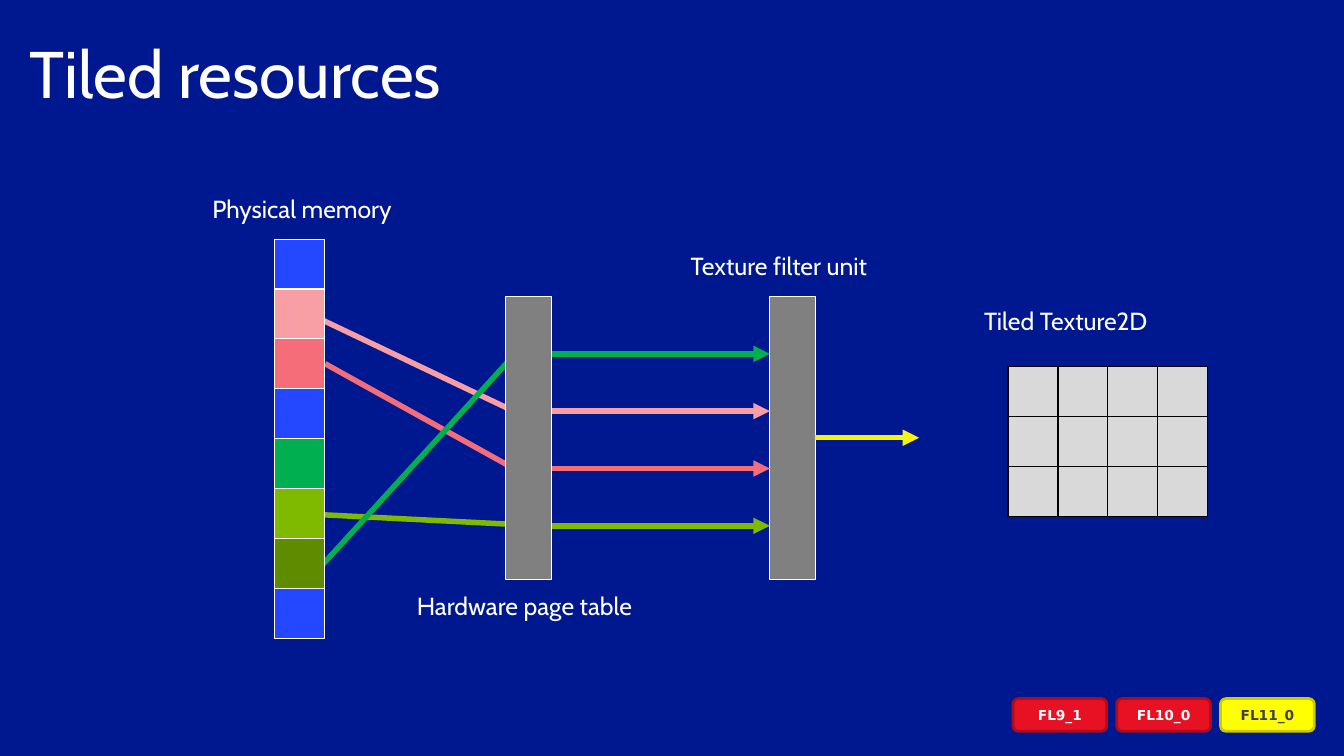
from dataclasses import dataclass

from lxml.etree import SubElement
from pptx import Presentation
from pptx.dml.color import RGBColor
from pptx.enum.shapes import MSO_CONNECTOR as CONN, MSO_SHAPE as SHAPE
from pptx.enum.text import MSO_ANCHOR as ANCHOR, PP_ALIGN as ALIGN
from pptx.oxml.ns import qn
from pptx.util import Pt

COLORS = {
    "navy": "00188F", "white": "FFFFFF", "black": "000000",
    "gray": "808080", "light": "D9D9D9", "dark": "404040",
    "blue": "2348FF", "pink": "F89EA5", "coral": "F46D78",
    "green": "00B050", "lime": "7FBA00", "olive": "5F8B00",
    "arrow": "F8F30D", "red": "E81123", "red_edge": "AC0D1A",
    "yellow": "FFFF00", "yellow_edge": "CDC800",
}
CELL = 36.36
UNIT_TOP, UNIT_W, UNIT_H = 216, 33.1, 205.9
TABLE_X, FILTER_X = 368.6, 560.9


@dataclass
class Label:
    text: str
    x: float
    y: float
    w: float


@dataclass
class Link:
    color: str
    x1: float
    y1: float
    x2: float
    y2: float


@dataclass
class Badge:
    text: str
    fill: str
    edge: str
    ink: str


LABELS = [
    Label("Physical memory", 147.6, 137.5, 150.5),
    Label("Hardware page table", 296.6, 427, 180.7),
    Label("Texture filter unit", 496.1, 179.3, 149),
    Label("Tiled Texture2D", 709.9, 219.6, 192.2),
]
LINKS = [
    Link("coral", 236.9, 265, 392.4, 351.4),
    Link("pink", 226.1, 229, 392.4, 308.2),
    Link("lime", 222.5, 374.4, 392.4, 383),
    Link("green", 218.9, 429.1, 385.2, 247),
]
MEMORY = ["blue", "pink", "coral", "blue", "green", "lime", "olive", "blue"]
LOOKUPS = ["green", "pink", "coral", "lime"]
BADGES = [
    Badge("FL9_1", "red", "red_edge", "white"),
    Badge("FL10_0", "red", "red_edge", "white"),
    Badge("FL11_0", "yellow", "yellow_edge", "dark"),
]


def rgb(name: str) -> RGBColor:
    return RGBColor.from_string(COLORS[name])


def write(s, text: str, *, size: float, color: str = "white", font: str = "Cabin",
          bold: bool = False, align=ALIGN.LEFT, anchor=ANCHOR.TOP,
          insets: tuple[float, float] = (7.2, 3.6)) -> None:
    tf = s.text_frame
    tf.word_wrap = True
    tf.vertical_anchor = anchor
    tf.margin_left = tf.margin_right = Pt(insets[0])
    tf.margin_top = tf.margin_bottom = Pt(insets[1])
    p = tf.paragraphs[0]
    p.alignment = align
    r = p.add_run()
    r.text = text
    r.font.name, r.font.size, r.font.bold = font, Pt(size), bold
    r.font.color.rgb = rgb(color)


def add_box(sp, x: float, y: float, w: float, h: float, fill: str,
            edge: str = "white", weight: float = 0.75, kind=SHAPE.RECTANGLE):
    s = sp.add_shape(kind, Pt(x), Pt(y), Pt(w), Pt(h))
    s.shadow.inherit = False
    s.fill.solid()
    s.fill.fore_color.rgb = rgb(fill)
    s.line.color.rgb = rgb(edge)
    s.line.width = Pt(weight)
    return s


def add_link(sp, link: Link, arrow: bool = False):
    c = sp.add_connector(CONN.STRAIGHT, Pt(link.x1), Pt(link.y1), Pt(link.x2), Pt(link.y2))
    c.line.color.rgb = rgb(link.color)
    c.line.width = Pt(4)
    if arrow:
        SubElement(c.line._get_or_add_ln(), qn("a:tailEnd"), type="triangle")
    SubElement(c._element.spPr, qn("a:effectLst"))
    return c


def main() -> None:
    prs = Presentation()
    prs.slide_width, prs.slide_height = Pt(979.2), Pt(550.8)
    slide = prs.slides.add_slide(prs.slide_layouts[6])
    slide.background.fill.solid()
    slide.background.fill.fore_color.rgb = rgb("navy")
    sp = slide.shapes

    # Title and labels
    title = sp.add_textbox(Pt(21.6), Pt(23.8), Pt(936), Pt(72))
    write(title, "Tiled resources", size=48, insets=(0, 0))
    for label in LABELS:
        s = sp.add_textbox(Pt(label.x), Pt(label.y), Pt(label.w), Pt(28.8))
        write(s, label.text, size=18)

    # Texture filter unit and its output
    filter_unit = add_box(sp, FILTER_X, UNIT_TOP, UNIT_W, UNIT_H, "gray")
    mid = UNIT_TOP + UNIT_H / 2
    output = add_link(sp, Link("arrow", FILTER_X + UNIT_W, mid, 669.6, mid), arrow=True)
    output.begin_connect(filter_unit, 3)

    # Page table lookups
    for i, color in enumerate(LOOKUPS):
        y = 257.8 + i * 41.76
        add_link(sp, Link(color, TABLE_X + UNIT_W, y, FILTER_X, y), arrow=True)

    # Memory links, then the blocks that cover their ends
    for link in LINKS:
        add_link(sp, link)
    for i, color in enumerate(MEMORY):
        add_box(sp, 200.2, 174.2 + i * CELL, CELL, CELL, color)
    add_box(sp, TABLE_X, UNIT_TOP, UNIT_W, UNIT_H, "gray")

    # Tiled texture
    for row in range(3):
        for col in range(4):
            add_box(sp, 734.4 + col * CELL, 267.1 + row * CELL, CELL, CELL,
                    "light", "black", 1)

    # Feature level badges
    for i, badge in enumerate(BADGES):
        s = add_box(sp, 738 + i * 75.6, 509, 68.4, 23.8, badge.fill, badge.edge, 2,
                    SHAPE.ROUNDED_RECTANGLE)
        write(s, badge.text, size=10, color=badge.ink, font="DejaVu Sans", bold=True,
              align=ALIGN.CENTER, anchor=ANCHOR.MIDDLE)

    prs.save("out.pptx")


if __name__ == "__main__":
    main()
